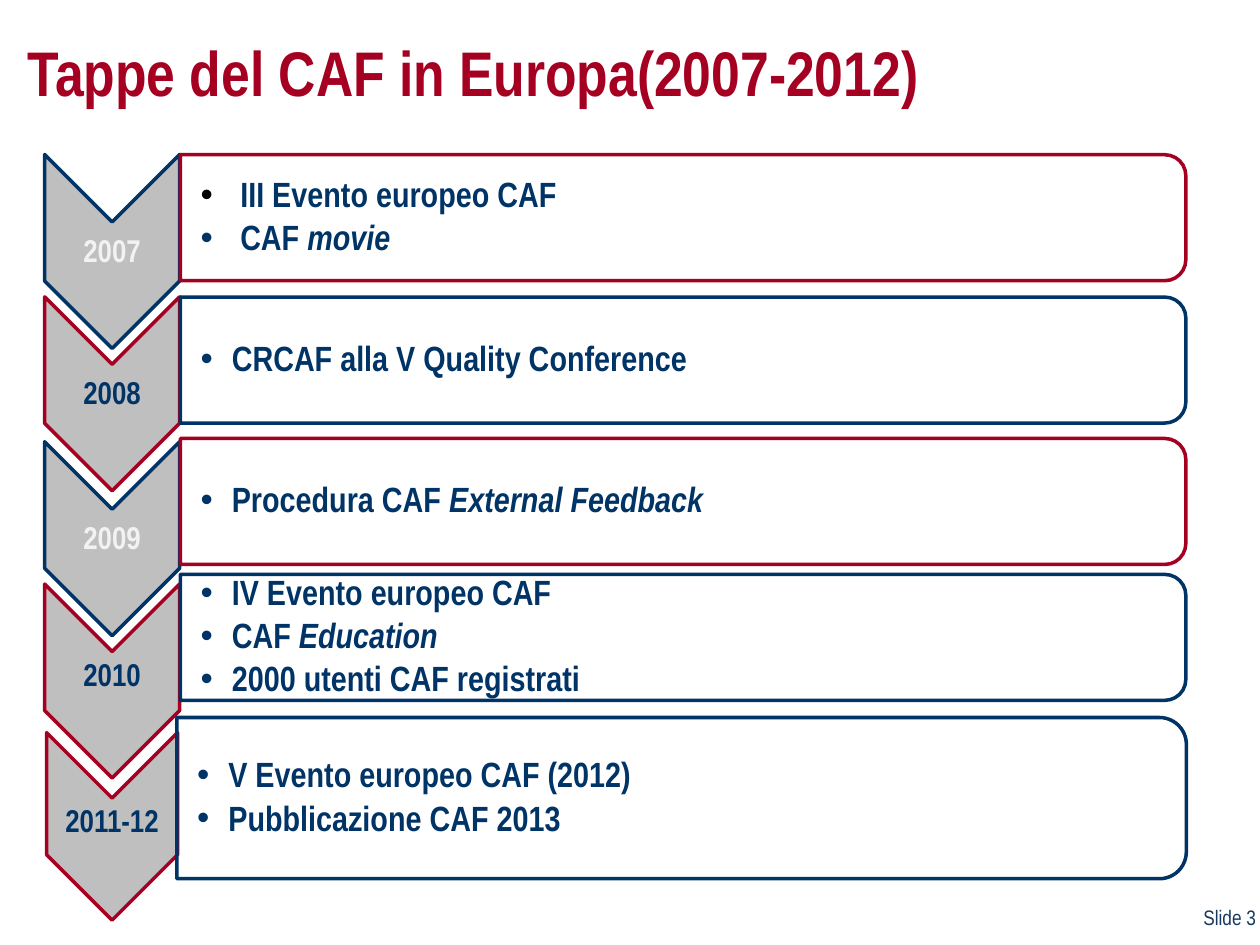
from lxml.etree import SubElement
from pptx import Presentation
from pptx.dml.color import RGBColor
from pptx.enum.shapes import MSO_SHAPE as SHAPE
from pptx.enum.text import MSO_ANCHOR as ANCHOR, PP_ALIGN as ALIGN
from pptx.oxml.ns import qn
from pptx.util import Cm, Pt

RED, NAVY, GREY, PALE = "A50021", "003366", "BFBFBF", "F2F2F2"


def rgb(color):
    return RGBColor.from_string(color)


def write(sp, lines, size=20, color=NAVY, bold=True, align=ALIGN.LEFT,
          inset=(0.03, 0.03), spacing=0.9, after=0, indent=0, bullets=()):
    tf = sp.text_frame
    tf.word_wrap = True
    tf.vertical_anchor = ANCHOR.MIDDLE
    tf.margin_left, tf.margin_right = (Cm(i) for i in inset)
    tf.margin_top = tf.margin_bottom = Cm(0.03)
    for i, runs in enumerate(lines):
        p = tf.add_paragraph() if i else tf.paragraphs[0]
        p.alignment = align
        p.line_spacing = spacing
        p.space_after = Pt(after)
        for text, italic in zip(runs, (False, True)):
            r = p.add_run()
            r.text = text
            r.font.name = "Arial Narrow"
            r.font.size = Pt(size)
            r.font.bold = bold
            r.font.italic = italic
            r.font.color.rgb = rgb(color)
        if bullets:
            pPr = p._p.get_or_add_pPr()
            pPr.set("marL", str(Cm(indent)))
            pPr.set("indent", str(-Cm(indent)))
            clr = SubElement(pPr, qn("a:buClr"))
            SubElement(clr, qn("a:srgbClr"), val=bullets[i])
            SubElement(pPr, qn("a:buFont"), typeface="Arial")
            SubElement(pPr, qn("a:buChar"), char="•")


prs = Presentation()
prs.slide_width, prs.slide_height = Cm(25.4), Cm(19.05)
slide = prs.slides.add_slide(prs.slide_layouts[5])
shapes = slide.shapes

title = shapes.title
title.left, title.top, title.width, title.height = Cm(0.3), Cm(0.74), Cm(22.78), Cm(1.4)
write(title, [("Tappe del CAF in Europa(2007-2012)",)], size=36, color=RED,
      inset=(0.25, 0.25), spacing=1)

steps = [
    dict(year="2007", ink=PALE, edge=NAVY, y=5.07, year_y=5.08,
         card_edge=RED, card_y=4.39, indent=0.8, bullets=("000000", NAVY),
         items=[("III Evento europeo CAF",), ("CAF ", "movie")]),
    dict(year="2008", ink=NAVY, edge=RED, y=7.94, year_y=7.95,
         card_edge=NAVY, card_y=7.26,
         items=[("CRCAF alla V Quality Conference",)]),
    dict(year="2009", ink=PALE, edge=NAVY, y=10.86, year_y=10.87,
         card_edge=RED, card_y=10.11,
         items=[("Procedura CAF ", "External Feedback")]),
    dict(year="2010", ink=NAVY, edge=RED, y=13.73, year_y=13.64,
         card_edge=NAVY, card_y=12.85,
         items=[("IV Evento europeo CAF",), ("CAF ", "Education"),
                ("2000 utenti CAF registrati",)]),
    dict(year="2011-12", ink=NAVY, edge=RED, y=16.66, year_y=16.57,
         card_edge=NAVY, card_y=16.09, size=(3.78, 2.64),
         card_size=(3.25, 20.35), card_x=13.74,
         items=[("V Evento europeo CAF (2012)",), ("Pubblicazione CAF 2013",)]),
]

for step in steps:
    x = 2.26
    card_x = step.get("card_x", 13.77)
    card_h, card_w = card_size = step.get("card_size", (2.54, 20.27))
    outlines = [
        (SHAPE.CHEVRON, x, step["y"], step.get("size", (3.91, 2.72)), GREY, step["edge"]),
        (SHAPE.ROUND_2_SAME_RECTANGLE, card_x, step["card_y"], card_size, None,
         step["card_edge"]),
    ]
    for kind, cx, cy, (w, h), fill, edge in outlines:
        sp = shapes.add_shape(kind, Cm(cx - w / 2), Cm(cy - h / 2), Cm(w), Cm(h))
        sp.rotation = 90
        sp.shadow.inherit = False
        sp.line.color.rgb = rgb(edge)
        sp.line.width = Pt(2)
        if fill:
            sp.fill.solid()
            sp.fill.fore_color.rgb = rgb(fill)
        else:
            sp.fill.background()

    year = shapes.add_textbox(Cm(x - 1.36), Cm(step["year_y"] - 0.58), Cm(2.72), Cm(1.16))
    write(year, [(step["year"],)], size=18, color=step["ink"], align=ALIGN.CENTER)

    items = step["items"]
    body = shapes.add_textbox(Cm(card_x - card_w / 2), Cm(step["card_y"] - card_h / 2 + 0.13),
                              Cm(card_w - 0.13), Cm(card_h - 0.26))
    write(body, items, inset=(0.41, 0.03), after=3, indent=step.get("indent", 0.63),
          bullets=step.get("bullets", (NAVY,) * len(items)))

number = shapes.add_textbox(Cm(20.29), Cm(17.86), Cm(5.28), Cm(1.27))
write(number, [("Slide 3",)], size=12, color="17375E", bold=False, align=ALIGN.RIGHT,
      inset=(0.25, 0.25), spacing=1)

prs.save("out.pptx")
